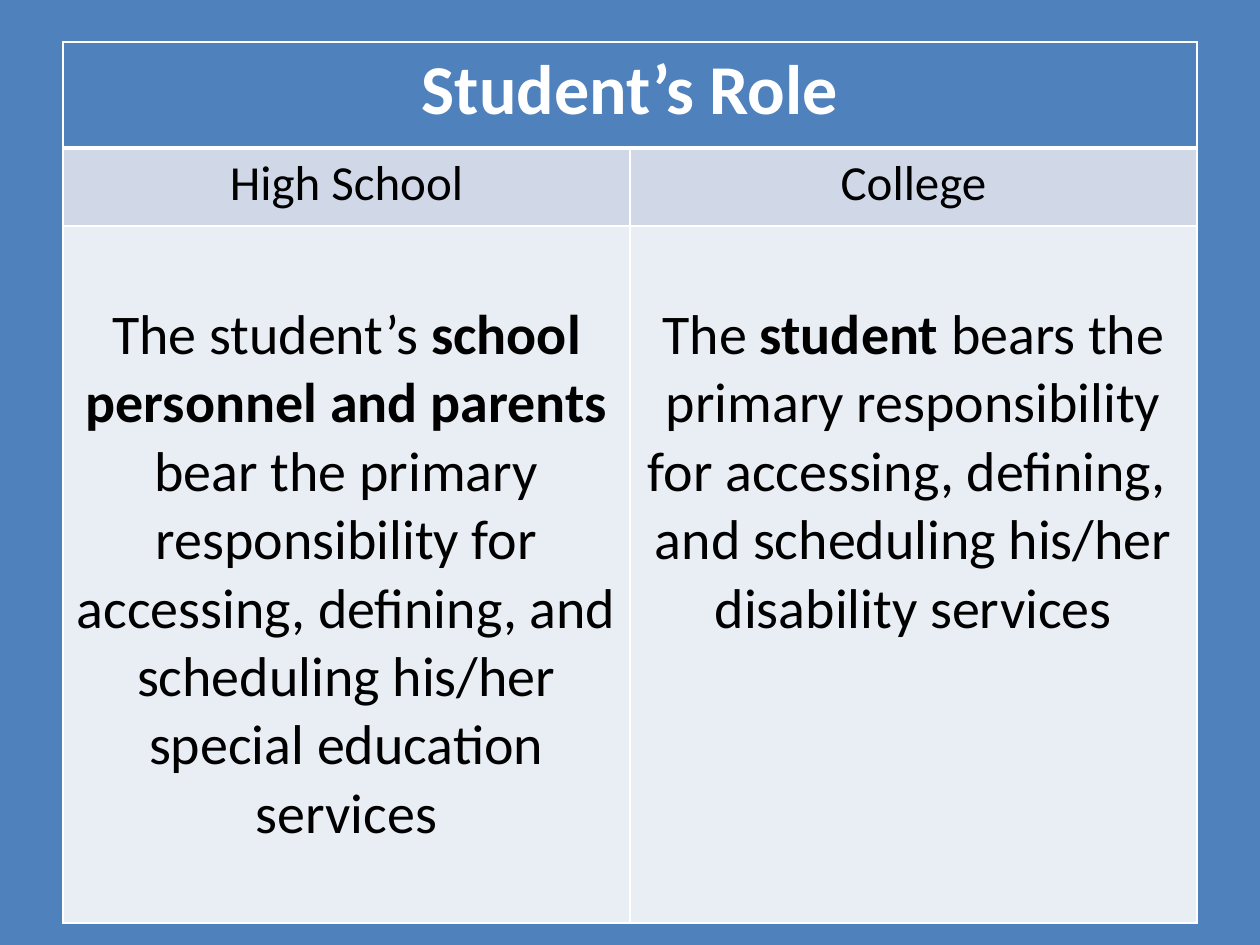
from dataclasses import dataclass

from lxml.etree import SubElement
from pptx import Presentation
from pptx.dml.color import RGBColor
from pptx.enum.text import PP_ALIGN as Align
from pptx.oxml.ns import qn
from pptx.util import Pt

PIXELS_PER_INCH = 126
WHITE, BLACK, BLUE = "FFFFFF", "000000", "4F81BD"
THIN, THICK = 1, 3


@dataclass
class Run:
    text: str
    bold: bool = False


@dataclass
class RowStyle:
    height: int
    fill: str
    color: str
    size: int
    top_line: int = THIN
    bottom_line: int = THIN
    margin_top: int = 6


ROW_STYLES = [
    RowStyle(106, BLUE, WHITE, 40, bottom_line=THICK),
    RowStyle(78, "D0D8E8", BLACK, 28, top_line=THICK),
    RowStyle(697, "E9EDF4", BLACK, 32, margin_top=75),
]
ROWS = [
    [[Run("Student’s Role", True)]],
    [[Run("High School")], [Run("College")]],
    [
        [
            Run("The student’s "),
            Run("school personnel and parents ", True),
            Run("bear the primary responsibility for accessing, defining, "
                "and scheduling his/her special education services"),
        ],
        [
            Run("The "),
            Run("student", True),
            Run(" bears the primary responsibility for accessing, defining,  "
                "and scheduling his/her disability services"),
        ],
    ],
]


def px(length: int) -> int:
    return round(length * 914400 / PIXELS_PER_INCH)


def rgb(color: str) -> RGBColor:
    return RGBColor.from_string(color)


def set_borders(cell, style: RowStyle) -> None:
    properties = cell._tc.get_or_add_tcPr()
    widths = {"L": THIN, "R": THIN, "T": style.top_line, "B": style.bottom_line}
    for side, width in widths.items():
        line = SubElement(properties, qn(f"a:ln{side}"), w=str(Pt(width)))
        fill = SubElement(line, qn("a:solidFill"))
        SubElement(fill, qn("a:srgbClr"), val=WHITE)


def fill_cell(cell, runs: list[Run], style: RowStyle) -> None:
    set_borders(cell, style)
    cell.fill.solid()
    cell.fill.fore_color.rgb = rgb(style.fill)
    cell.margin_top = px(style.margin_top)
    paragraph = cell.text_frame.paragraphs[0]
    paragraph.alignment = Align.CENTER
    paragraph.font.name = "Calibri"
    paragraph.font.size = Pt(style.size)
    paragraph.font.color.rgb = rgb(style.color)
    for item in runs:
        run = paragraph.add_run()
        run.text = item.text
        run.font.bold = item.bold


def add_role_table(slide) -> None:
    height = sum(style.height for style in ROW_STYLES)
    table = slide.shapes.add_table(
        len(ROWS), 2, px(63), px(42), px(1134), px(height)
    ).table
    table.cell(0, 0).merge(table.cell(0, 1))
    for row_index, (style, contents) in enumerate(zip(ROW_STYLES, ROWS)):
        table.rows[row_index].height = px(style.height)
        for column_index, runs in enumerate(contents):
            fill_cell(table.cell(row_index, column_index), runs, style)


def main() -> None:
    presentation = Presentation()
    presentation.slide_width = px(1260)
    presentation.slide_height = px(945)
    slide = presentation.slides.add_slide(presentation.slide_layouts[6])
    slide.background.fill.solid()
    slide.background.fill.fore_color.rgb = rgb(BLUE)
    add_role_table(slide)
    presentation.save("out.pptx")


if __name__ == "__main__":
    main()
